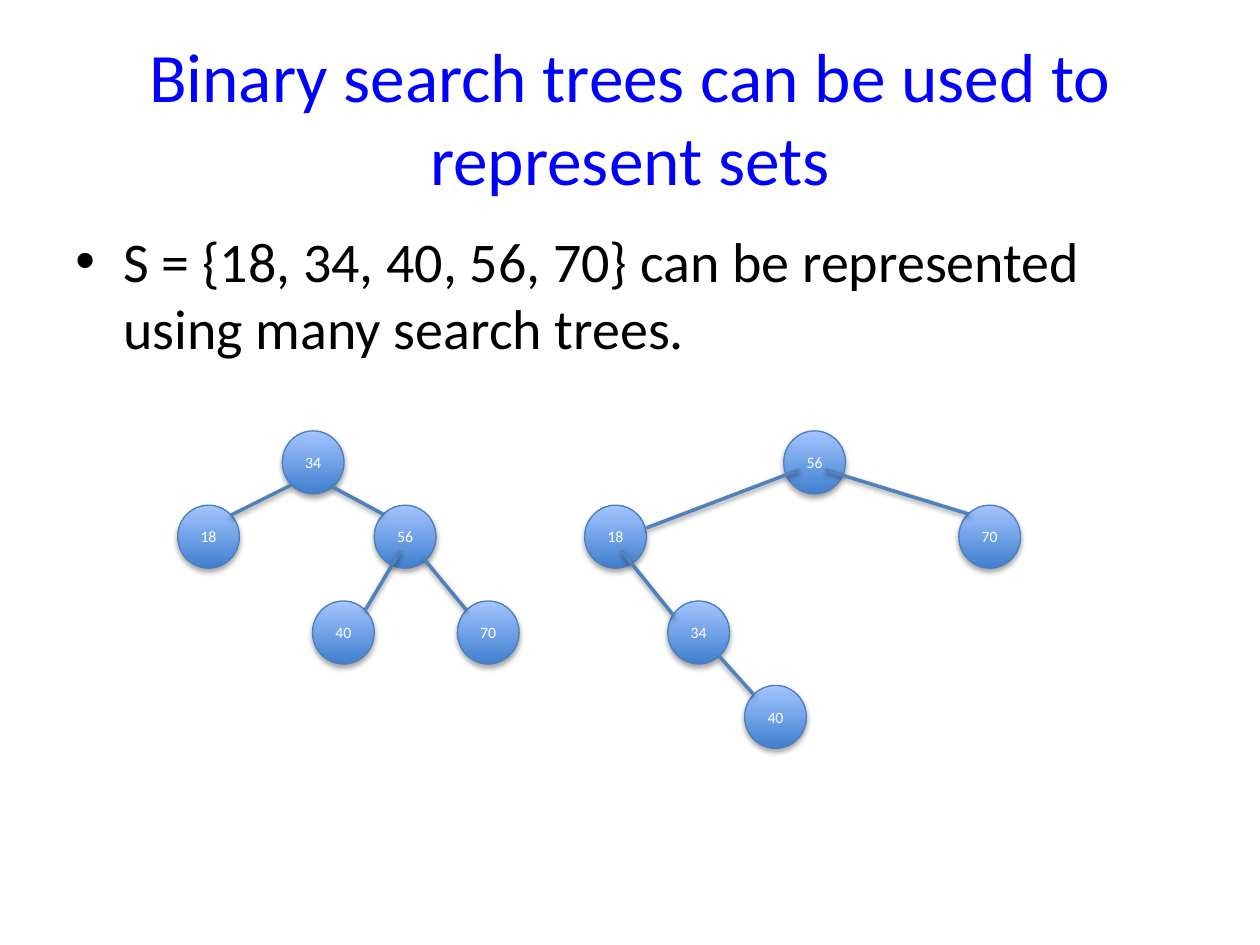
from dataclasses import dataclass

from lxml import etree
from pptx import Presentation
from pptx.dml.color import RGBColor
from pptx.enum.shapes import MSO_CONNECTOR, MSO_SHAPE
from pptx.enum.text import MSO_ANCHOR, MSO_AUTO_SIZE, PP_ALIGN
from pptx.oxml.ns import qn
from pptx.util import Emu, Pt

STRAIGHT = MSO_CONNECTOR.STRAIGHT
OVAL = MSO_SHAPE.OVAL
MIDDLE = MSO_ANCHOR.MIDDLE
TOP = MSO_ANCHOR.TOP
NO_AUTOFIT = MSO_AUTO_SIZE.NONE
CENTER = PP_ALIGN.CENTER
LEFT = PP_ALIGN.LEFT

PX_PER_INCH = 100
NODE_WIDTH, NODE_HEIGHT = 49, 50
BULLET_INDENT = 38


@dataclass(frozen=True)
class Theme:
    font: str = "Calibri"
    title_color: str = "0000FF"
    body_color: str = "000000"
    node_text: str = "FFFFFF"
    node_bottom: str = "3F80CE"
    node_top: str = "A4C4FF"
    node_line: str = "4B7EBC"
    edge: str = "4F81BD"
    shadow: str = "000000"
    title_size: float = 39.6
    body_size: float = 32
    node_size: float = 9
    node_line_width: float = 0.75
    edge_width: float = 2


THEME = Theme()

LEFT_TREE = {
    "nodes": [("34", 83, 0), ("18", 0, 59), ("56", 156, 59),
              ("40", 107, 135), ("70", 222, 135)],
    "edges": [(122, 44, 163, 66), (90, 43, 42, 67),
              (195, 101, 229, 142), (177, 95, 149, 142)],
}
RIGHT_TREE = {
    "nodes": [("56", 158, 0), ("18", 0, 59), ("70", 297, 59),
              ("34", 66, 135), ("40", 127, 202)],
    "edges": [(49, 77, 170, 31), (191, 31, 305, 66),
              (29, 95, 71, 147), (107, 179, 134, 209)],
}


def px(length):
    return Emu(length * 914400 // PX_PER_INCH)


def color(value):
    return RGBColor.from_string(value)


def write(frame, text, size, fill, align, anchor):
    frame.text = text
    frame.word_wrap = True
    frame.auto_size = NO_AUTOFIT
    frame.vertical_anchor = anchor
    para = frame.paragraphs[0]
    para.alignment = align
    for span in para.runs:
        span.font.name = THEME.font
        span.font.size = Pt(size)
        span.font.color.rgb = color(fill)
    return para


def add_shadow(shape, alpha, distance):
    properties = shape._element.spPr
    for old in properties.findall(qn("a:effectLst")):
        properties.remove(old)
    effects = etree.SubElement(properties, qn("a:effectLst"))
    outer = etree.SubElement(effects, qn("a:outerShdw"), blurRad=str(Pt(3.1)),
                             dist=str(Pt(distance)), dir="5400000", rotWithShape="0")
    tint = etree.SubElement(outer, qn("a:srgbClr"), val=THEME.shadow)
    etree.SubElement(tint, qn("a:alpha"), val=str(alpha * 1000))


def add_title(page, box, text):
    title = page.shapes.title
    title.left, title.top, title.width, title.height = map(px, box)
    write(title.text_frame, text, THEME.title_size, THEME.title_color, CENTER, MIDDLE)


def add_body(page, box, text):
    body = page.shapes.add_textbox(*map(px, box))
    para = write(body.text_frame, text, THEME.body_size, THEME.body_color, LEFT, TOP)
    para.space_before = Pt(THEME.body_size * 0.2)
    properties = para._p.get_or_add_pPr()
    properties.set("marL", str(px(BULLET_INDENT)))
    properties.set("indent", str(-px(BULLET_INDENT)))
    etree.SubElement(properties, qn("a:buFont"), typeface="Arial")
    etree.SubElement(properties, qn("a:buChar"), char="•")


def add_node(page, left, top, key):
    node = page.shapes.add_shape(OVAL, px(left), px(top), px(NODE_WIDTH), px(NODE_HEIGHT))
    node.fill.gradient()
    node.fill.gradient_angle = 90
    for stop, position, shade in zip(node.fill.gradient_stops, (0, 1),
                                     (THEME.node_bottom, THEME.node_top)):
        stop.position = position
        stop.color.rgb = color(shade)
    node.line.color.rgb = color(THEME.node_line)
    node.line.width = Pt(THEME.node_line_width)
    add_shadow(node, 35, 1.8)
    frame = node.text_frame
    frame.margin_left = frame.margin_right = 0
    write(frame, key, THEME.node_size, THEME.node_text, CENTER, MIDDLE)


def add_edge(page, start_x, start_y, end_x, end_y):
    edge = page.shapes.add_connector(STRAIGHT, px(start_x), px(start_y), px(end_x), px(end_y))
    edge.line.color.rgb = color(THEME.edge)
    edge.line.width = Pt(THEME.edge_width)
    add_shadow(edge, 38, 1.6)


def add_tree(page, origin, tree):
    left, top = origin
    for key, x, y in tree["nodes"]:
        add_node(page, left + x, top + y, key)
    for start_x, start_y, end_x, end_y in tree["edges"]:
        add_edge(page, left + start_x, top + start_y, left + end_x, top + end_y)


def main():
    deck = Presentation()
    deck.slide_width, deck.slide_height = px(1000), px(750)
    page = deck.slides.add_slide(deck.slide_layouts[5])
    add_title(page, (50, 30, 900, 125), "Binary search trees can be used to represent sets")
    add_body(page, (50, 175, 900, 495),
             "S = {18, 34, 40, 56, 70} can be represented using many search trees.")
    add_tree(page, (141, 342), LEFT_TREE)
    add_tree(page, (464, 342), RIGHT_TREE)
    deck.save("out.pptx")


if __name__ == "__main__":
    main()
